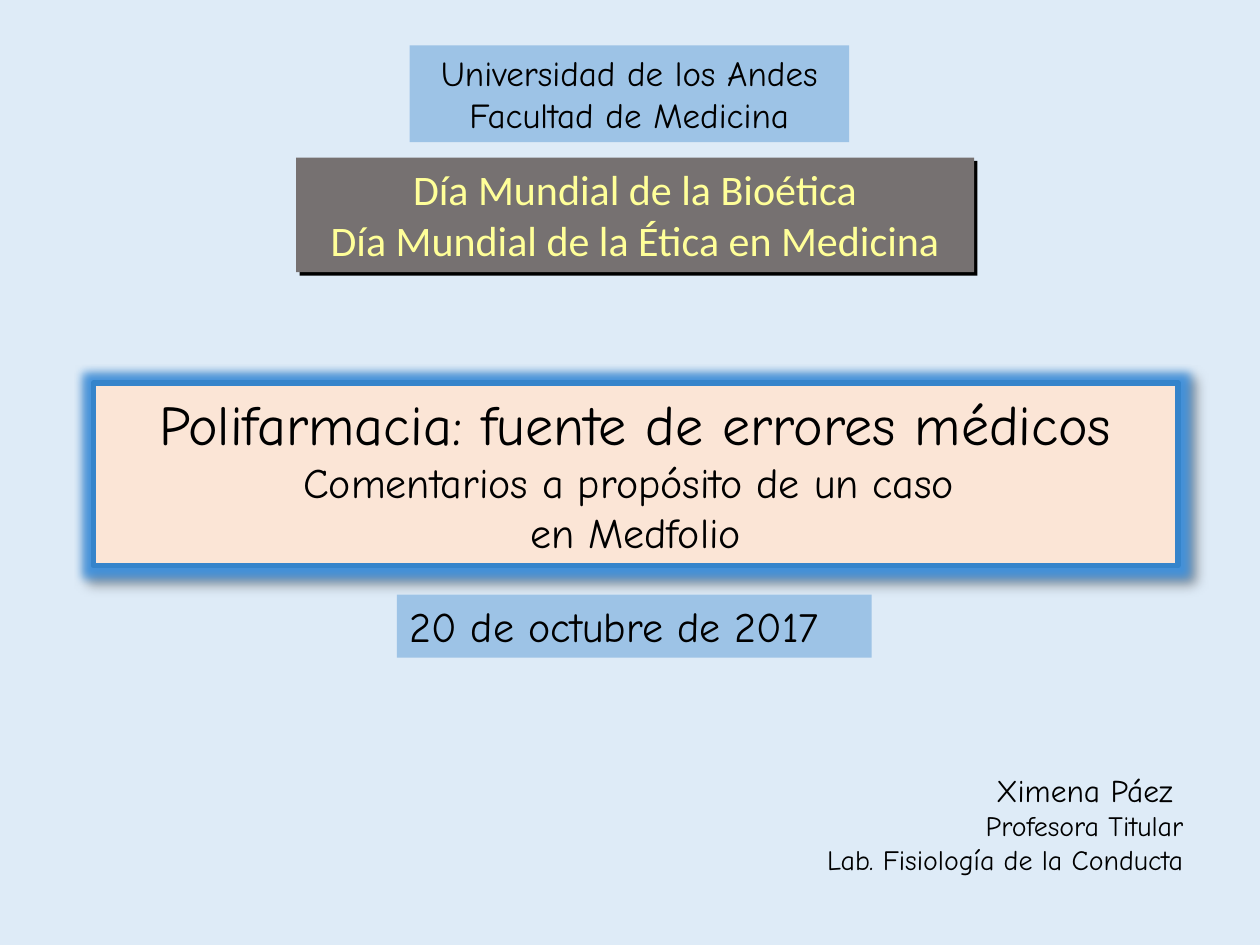
from lxml.etree import SubElement
from pptx import Presentation
from pptx.dml.color import RGBColor
from pptx.enum.shapes import MSO_SHAPE
from pptx.enum.text import MSO_ANCHOR, MSO_AUTO_SIZE, PP_ALIGN
from pptx.oxml.ns import qn
from pptx.util import Pt

COLORS = {
    "background": "DEEBF7",
    "band": "9DC3E6",
    "event": "767171",
    "event_text": "FFFF99",
    "topic": "FBE5D6",
    "border": "3584CB",
    "glow": "3C91E0",
    "text": "000000",
}
HAND_FONT = "Comic Neue"


def rgb(name):
    return RGBColor.from_string(COLORS[name])


def paint(fill, name):
    fill.solid()
    fill.fore_color.rgb = rgb(name)


def write_text(frame, lines, font=HAND_FONT, color="text", align=PP_ALIGN.CENTER):
    frame.word_wrap = True
    frame.auto_size = MSO_AUTO_SIZE.NONE
    frame.vertical_anchor = MSO_ANCHOR.TOP
    for index, (text, size) in enumerate(lines):
        paragraph = frame.add_paragraph() if index else frame.paragraphs[0]
        paragraph.alignment = align
        run = paragraph.add_run()
        run.text = text
        run.font.name = font
        run.font.size = Pt(size)
        run.font.color.rgb = rgb(color)


def add_effect(shape, kind, color, alpha, **lengths):
    shape.shadow.inherit = False
    effects = shape._element.spPr.find(qn("a:effectLst"))
    attributes = {key: str(value) for key, value in lengths.items()}
    effect = SubElement(effects, qn(f"a:{kind}"), attributes)
    tint = SubElement(effect, qn("a:srgbClr"), val=COLORS[color])
    SubElement(tint, qn("a:alpha"), val=str(alpha * 1000))


def add_shadow(shape, alpha, blur, distance):
    add_effect(shape, "outerShdw", "text", alpha, blurRad=Pt(blur),
               dist=Pt(distance), dir=45 * 60000, algn="tl", rotWithShape=0)


def add_band(slide, box, fill, lines, **text_format):
    band = slide.shapes.add_shape(MSO_SHAPE.RECTANGLE, *map(Pt, box))
    band.shadow.inherit = False
    paint(band.fill, fill)
    band.line.fill.background()
    write_text(band.text_frame, lines, **text_format)
    return band


def place_topic(slide, box, lines):
    topic = slide.shapes.title
    topic.left, topic.top, topic.width, topic.height = map(Pt, box)
    paint(topic.fill, "topic")
    topic.line.color.rgb = rgb("border")
    topic.line.width = Pt(3)
    write_text(topic.text_frame, lines)
    add_effect(topic, "glow", "glow", 90, rad=Pt(11))
    add_shadow(topic, 40, 4, 3)


def add_author(slide, box, lines):
    author = slide.shapes.add_textbox(*map(Pt, box))
    write_text(author.text_frame, lines, align=PP_ALIGN.RIGHT)


def main():
    deck = Presentation()
    deck.slide_width, deck.slide_height = Pt(720), Pt(540)
    slide = deck.slides.add_slide(deck.slide_layouts[5])
    paint(slide.background.fill, "background")

    place_topic(slide, (53.3, 218.9, 619.9, 104.4), [
        ("Polifarmacia: fuente de errores médicos", 32),
        ("Comentarios a propósito de un caso ", 24),
        ("en Medfolio", 24),
    ])
    event = add_band(slide, (169.2, 90, 387.4, 65.5), "event", [
        ("Día Mundial de la Bioética", 24),
        ("Día Mundial de la Ética en Medicina", 24),
    ], font="Calibri", color="event_text")
    add_shadow(event, 100, 0, 2.8)
    add_band(slide, (226.8, 339.8, 271.4, 36), "band",
             [("20 de octubre de 2017", 24)], align=PP_ALIGN.LEFT)
    add_band(slide, (234, 25.9, 251.3, 55.4), "band", [
        ("Universidad de los Andes", 20),
        ("Facultad de Medicina", 20),
    ])
    add_author(slide, (449.3, 437, 234, 67.7), [
        ("Ximena Páez ", 18),
        ("Profesora Titular", 16),
        ("Lab. Fisiología de la Conducta", 16),
    ])
    deck.save("out.pptx")


if __name__ == "__main__":
    main()
